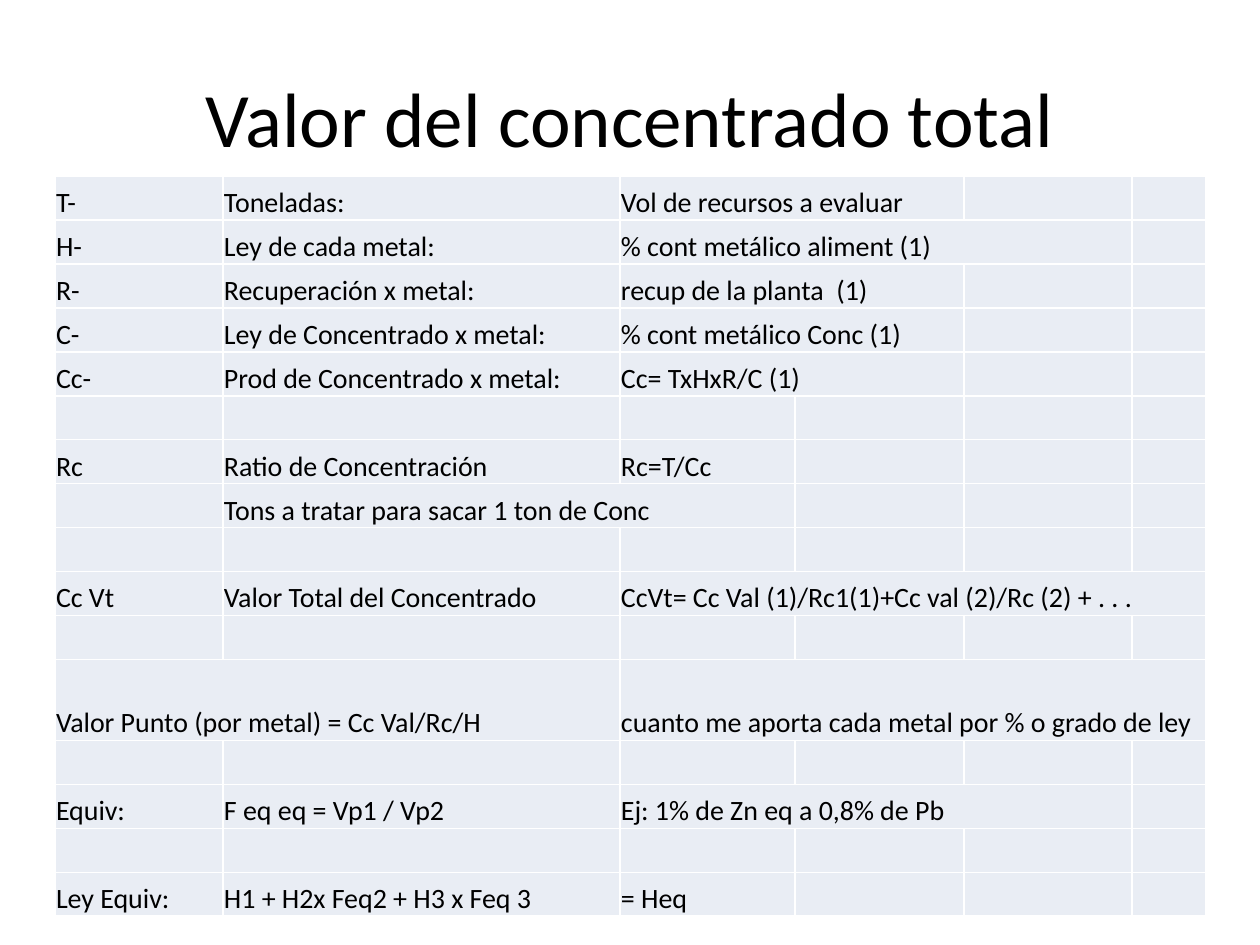
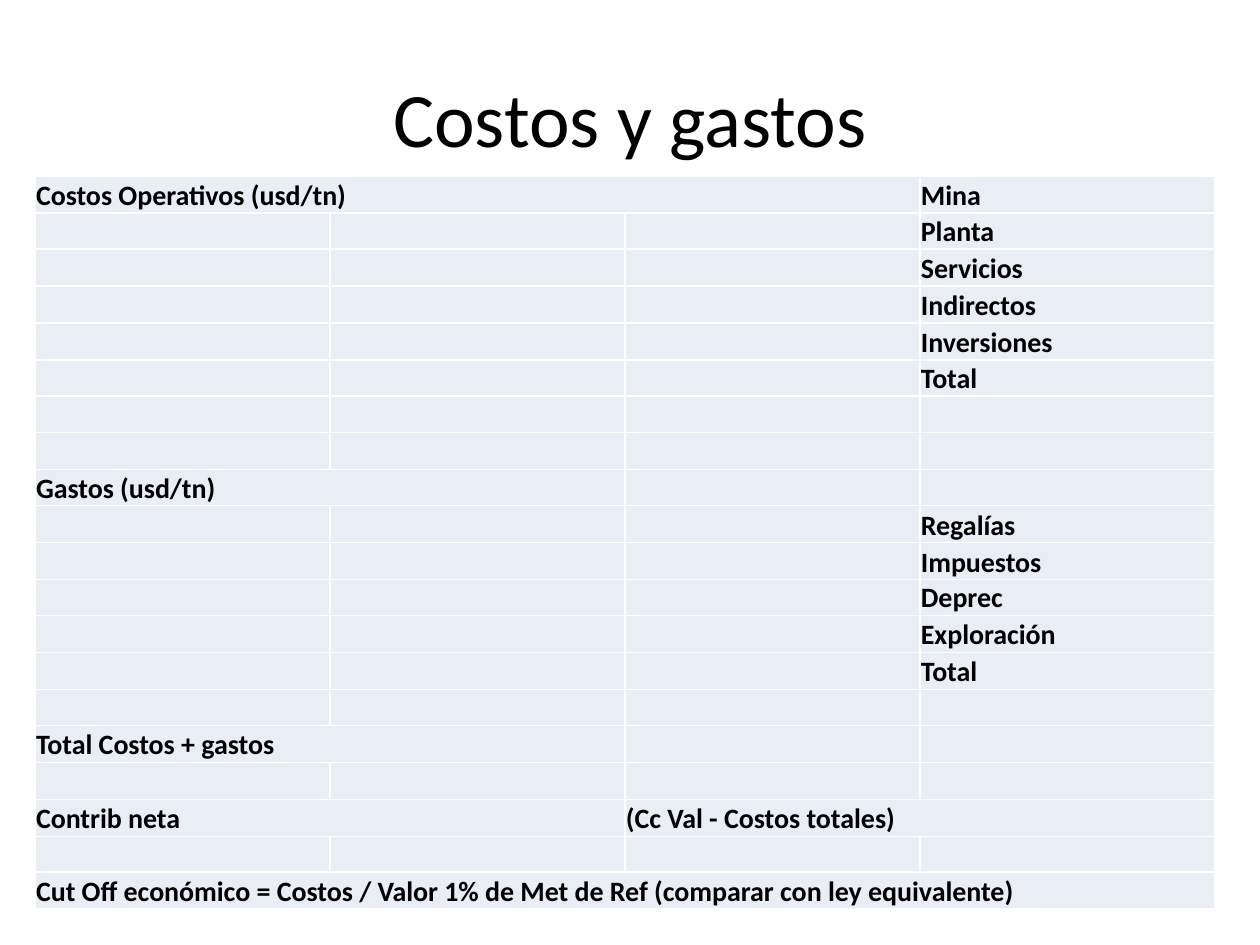
import dataclasses

import lxml.etree
import pptx
import pptx.dml.color
import pptx.enum.text
import pptx.oxml.ns
import pptx.util


@dataclasses.dataclass(frozen=True)
class Theme:
    font: str = "Calibri"
    text: str = "000000"
    cell: str = "E9EDF4"
    border: str = "FFFFFF"
    title_size: int = 44
    table_size: int = 16
    border_width: int = 1


theme = Theme()
qn = pptx.oxml.ns.qn


def px(length):
    """Turn pixels, 126 to the inch, into EMU."""
    return pptx.util.Emu(round(length * 914400 / 126))


def add_run(paragraph, text, size, bold=False):
    run = paragraph.add_run()
    run.text = text
    run.font.name = theme.font
    run.font.size = pptx.util.Pt(size)
    run.font.bold = bold
    run.font.color.rgb = pptx.dml.color.RGBColor.from_string(theme.text)


# In each row None continues the cell on its left; missing cells are empty.
concentrate_rows = [
    ["T-", "Toneladas:", "Vol de recursos a evaluar", None],
    ["H-", "Ley de cada metal:", "% cont metálico aliment (1)", None, None],
    ["R-", "Recuperación x metal:", "recup de la planta  (1)", None],
    ["C-", "Ley de Concentrado x metal:", "% cont metálico Conc (1)", None],
    ["Cc-", "Prod de Concentrado x metal:", "Cc= TxHxR/C (1)", None],
    [],
    ["Rc", "Ratio de Concentración", "Rc=T/Cc"],
    ["", "Tons a tratar para sacar 1 ton de Conc", None],
    [],
    ["Cc Vt", "Valor Total del Concentrado",
     "CcVt= Cc Val (1)/Rc1(1)+Cc val (2)/Rc (2) + . . .", None, None, None],
    [],
    ["Valor Punto (por metal) = Cc Val/Rc/H", None,
     "cuanto me aporta cada metal por % o grado de ley", None, None, None],
    [],
    ["Equiv:", "F eq eq = Vp1 / Vp2", "Ej: 1% de Zn eq a 0,8% de Pb", None, None],
    [],
    ["Ley Equiv:", "H1 + H2x Feq2 + H3 x Feq 3", "= Heq"],
]
concentrate_heights = [44] * len(concentrate_rows)
concentrate_heights[11] = 81

operating_costs = ["Planta", "Servicios", "Indirectos", "Inversiones", "Total"]
expenses = ["Regalías", "Impuestos", "Deprec", "Exploración", "Total"]
cost_rows = [
    ["Costos Operativos (usd/tn)", None, None, "Mina"],
    *[["", "", "", item] for item in operating_costs],
    [],
    [],
    ["Gastos (usd/tn)", None],
    *[["", "", "", item] for item in expenses],
    [],
    ["Total Costos + gastos", None],
    [],
    ["Contrib neta", None, "(Cc Val - Costos totales)", None],
    [],
    ["Cut Off económico = Costos / Valor 1% de Met de Ref (comparar con ley equivalente)",
     None, None, None],
]
cost_table_height = 734
cost_edges = [round(cost_table_height * i / len(cost_rows)) for i in range(len(cost_rows) + 1)]
cost_heights = [bottom - top for top, bottom in zip(cost_edges, cost_edges[1:])]

table_top = 176
pages = [
    ("Valor del concentrado total", 55, [168, 397, 175, 169, 168, 74],
     concentrate_heights, concentrate_rows, False),
    ("Costos y gastos", 35, [295] * 4, cost_heights, cost_rows, True),
]

presentation = pptx.Presentation()
presentation.slide_width = px(1260)
presentation.slide_height = px(945)

for title_text, table_left, widths, heights, rows, bold in pages:
    slide = presentation.slides.add_slide(presentation.slide_layouts[5])

    title = slide.shapes.title
    title.left, title.top, title.width, title.height = px(63), px(38), px(1134), px(158)
    title.text_frame.vertical_anchor = pptx.enum.text.MSO_ANCHOR.MIDDLE
    title_paragraph = title.text_frame.paragraphs[0]
    title_paragraph.alignment = pptx.enum.text.PP_ALIGN.CENTER
    add_run(title_paragraph, title_text, theme.title_size)

    table = slide.shapes.add_table(
        len(rows), len(widths), px(table_left), px(table_top), px(sum(widths)), px(sum(heights))
    ).table
    table.first_row = False
    table.horz_banding = False
    for column, width in zip(table.columns, widths):
        column.width = px(width)

    for row_index, (row, height) in enumerate(zip(rows, heights)):
        table.rows[row_index].height = px(height)
        texts = row + [""] * (len(widths) - len(row))
        for column_index, text in enumerate(texts):
            cell = table.cell(row_index, column_index)
            cell.margin_left = cell.margin_right = cell.margin_top = px(1)
            cell.margin_bottom = 0
            cell.vertical_anchor = pptx.enum.text.MSO_ANCHOR.BOTTOM

            cell_properties = cell._tc.get_or_add_tcPr()
            for side in ("a:lnL", "a:lnR", "a:lnT", "a:lnB"):
                line = lxml.etree.SubElement(
                    cell_properties, qn(side), w=str(pptx.util.Pt(theme.border_width)))
                line_fill = lxml.etree.SubElement(line, qn("a:solidFill"))
                lxml.etree.SubElement(line_fill, qn("a:srgbClr"), val=theme.border)
            cell.fill.solid()
            cell.fill.fore_color.rgb = pptx.dml.color.RGBColor.from_string(theme.cell)

            paragraph = cell.text_frame.paragraphs[0]
            if text:
                add_run(paragraph, text, theme.table_size, bold)
            else:
                # An empty cell needs its own type size to keep the row low.
                lxml.etree.SubElement(
                    paragraph._p, qn("a:endParaRPr"), sz=str(theme.table_size * 100))

        for start, text in enumerate(texts):
            end = start
            while end + 1 < len(texts) and texts[end + 1] is None:
                end += 1
            if text is not None and end > start:
                table.cell(row_index, start).merge(table.cell(row_index, end))

presentation.save("out.pptx")
